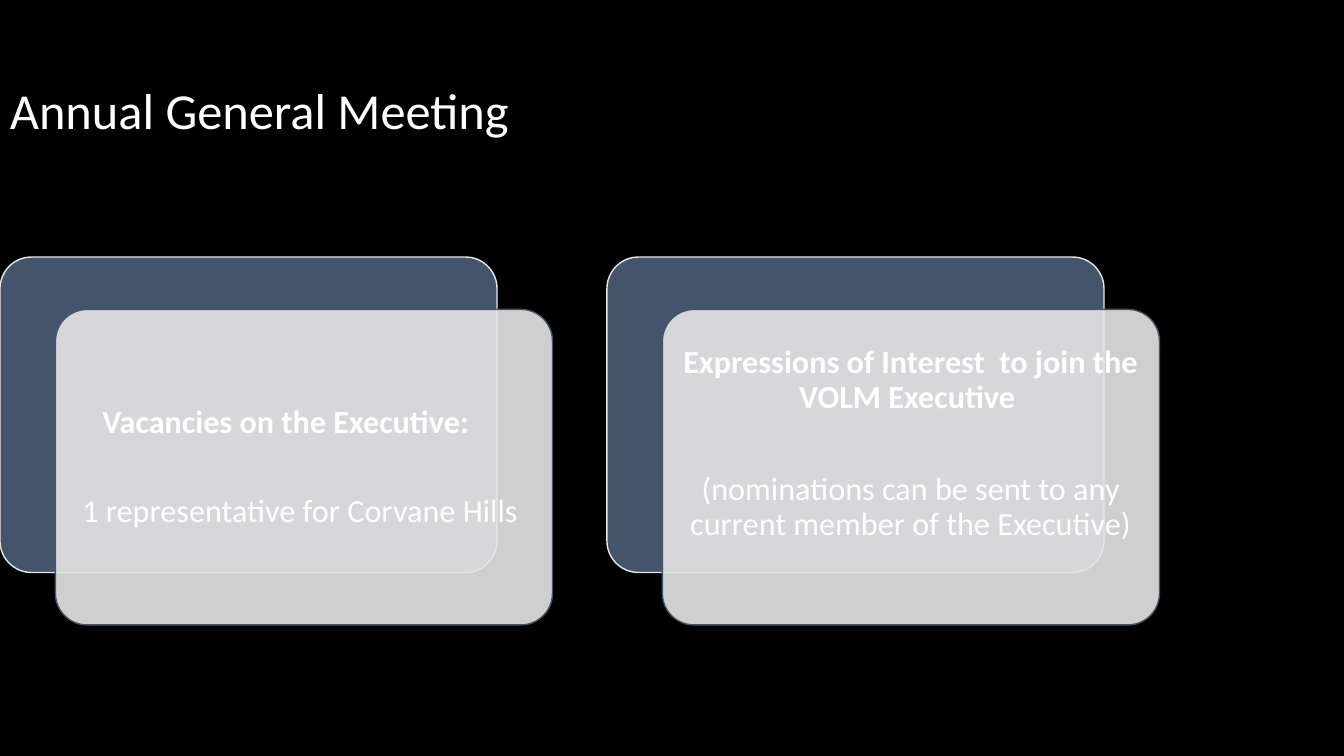
import pptx
import pptx.dml.color
import pptx.enum.shapes
import pptx.enum.text
import pptx.oxml.ns
import pptx.util
from lxml import etree

Inches, Pt = pptx.util.Inches, pptx.util.Pt
RGBColor = pptx.dml.color.RGBColor
PP_ALIGN = pptx.enum.text.PP_ALIGN

BLACK = RGBColor(0x00, 0x00, 0x00)
WHITE = RGBColor(0xFF, 0xFF, 0xFF)
SLATE = RGBColor(0x44, 0x54, 0x6A)
PALE = RGBColor(0xE7, 0xE6, 0xE6)

CARD_W, CARD_H = 4.93, 3.13
CARD_TOP, CARD_PITCH = 2.55, 6.02
FRONT_DX, FRONT_DY = 0.55, 0.52
TEXT_PAD = 0.09

HEADING = {"bold": True, "line_spacing": 0.9}

# Each card: bottom text inset, then its paragraphs with their formats
CARDS = [
    (0.1, [
        ("Vacancies on the Executive:\t", {**HEADING, "space_after": Pt(36)}),
        ("1 representative for Corvane Hills ", {}),
    ]),
    (0.56, [
        ("Expressions of Interest  to join the VOLM Executive ",
         {**HEADING, "space_after": Pt(41)}),
        ("(nominations can be sent to any current member of the Executive)",
         {"line_spacing": 0.9}),
    ]),
]


class Deck:
    font = "Calibri"
    text_color = WHITE

    def __init__(self, width, height):
        self.prs = pptx.Presentation()
        self.prs.slide_width = Inches(width)
        self.prs.slide_height = Inches(height)
        self.s = None

    def add_slide(self, color):
        self.s = self.prs.slides.add_slide(self.prs.slide_layouts[6])
        fill = self.s.background.fill
        fill.solid()
        fill.fore_color.rgb = color

    def panel(self, x, y, fill, line, alpha=None):
        """Add a rounded card panel; alpha is its opacity in percent."""
        sp = self.s.shapes.add_shape(
            pptx.enum.shapes.MSO_SHAPE.ROUNDED_RECTANGLE,
            Inches(x), Inches(y), Inches(CARD_W), Inches(CARD_H))
        sp.adjustments[0] = 0.1
        sp.shadow.inherit = False
        sp.fill.solid()
        sp.fill.fore_color.rgb = fill
        sp.line.color.rgb = line
        sp.line.width = Pt(1)
        if alpha is not None:
            qn = pptx.oxml.ns.qn
            color = sp.fill._xPr.find(qn("a:solidFill")).find(qn("a:srgbClr"))
            etree.SubElement(color, qn("a:alpha")).set("val", str(alpha * 1000))

    def text(self, x, y, w, h, paragraphs, size, align, frame):
        box = self.s.shapes.add_textbox(Inches(x), Inches(y), Inches(w), Inches(h))
        tf = box.text_frame
        frame = {"word_wrap": True,
                 "vertical_anchor": pptx.enum.text.MSO_ANCHOR.MIDDLE, **frame}
        for name, value in frame.items():
            setattr(tf, name, value)
        for i, (words, fmt) in enumerate(paragraphs):
            p = tf.add_paragraph() if i else tf.paragraphs[0]
            p.alignment = align
            r = p.add_run()
            r.text = words
            r.font.color.rgb = self.text_color
            for name, value in {"name": self.font, "size": Pt(size), **fmt}.items():
                setattr(p if "spac" in name else r.font, name, value)

    def card(self, x, bottom_inset, paragraphs):
        front_x, front_y = x + FRONT_DX, CARD_TOP + FRONT_DY
        self.panel(x, CARD_TOP, SLATE, PALE)
        self.panel(front_x, front_y, PALE, SLATE, alpha=90)
        frame = {"margin_" + side: Inches(0.1) for side in ("left", "top", "right")}
        frame["margin_bottom"] = Inches(bottom_inset)
        self.text(front_x + TEXT_PAD, front_y + TEXT_PAD,
                  CARD_W - 2 * TEXT_PAD, CARD_H - 2 * TEXT_PAD,
                  paragraphs, 23, PP_ALIGN.CENTER, frame)


def main():
    deck = Deck(13.33, 7.5)
    deck.add_slide(BLACK)
    deck.text(0, 0.4, 11.5, 1.45,
              [("Annual General Meeting", {"line_spacing": 0.9})],
              36, PP_ALIGN.LEFT, {})
    for i, (bottom_inset, paragraphs) in enumerate(CARDS):
        deck.card(i * CARD_PITCH, bottom_inset, paragraphs)
    deck.prs.save("out.pptx")


if __name__ == "__main__":
    main()
